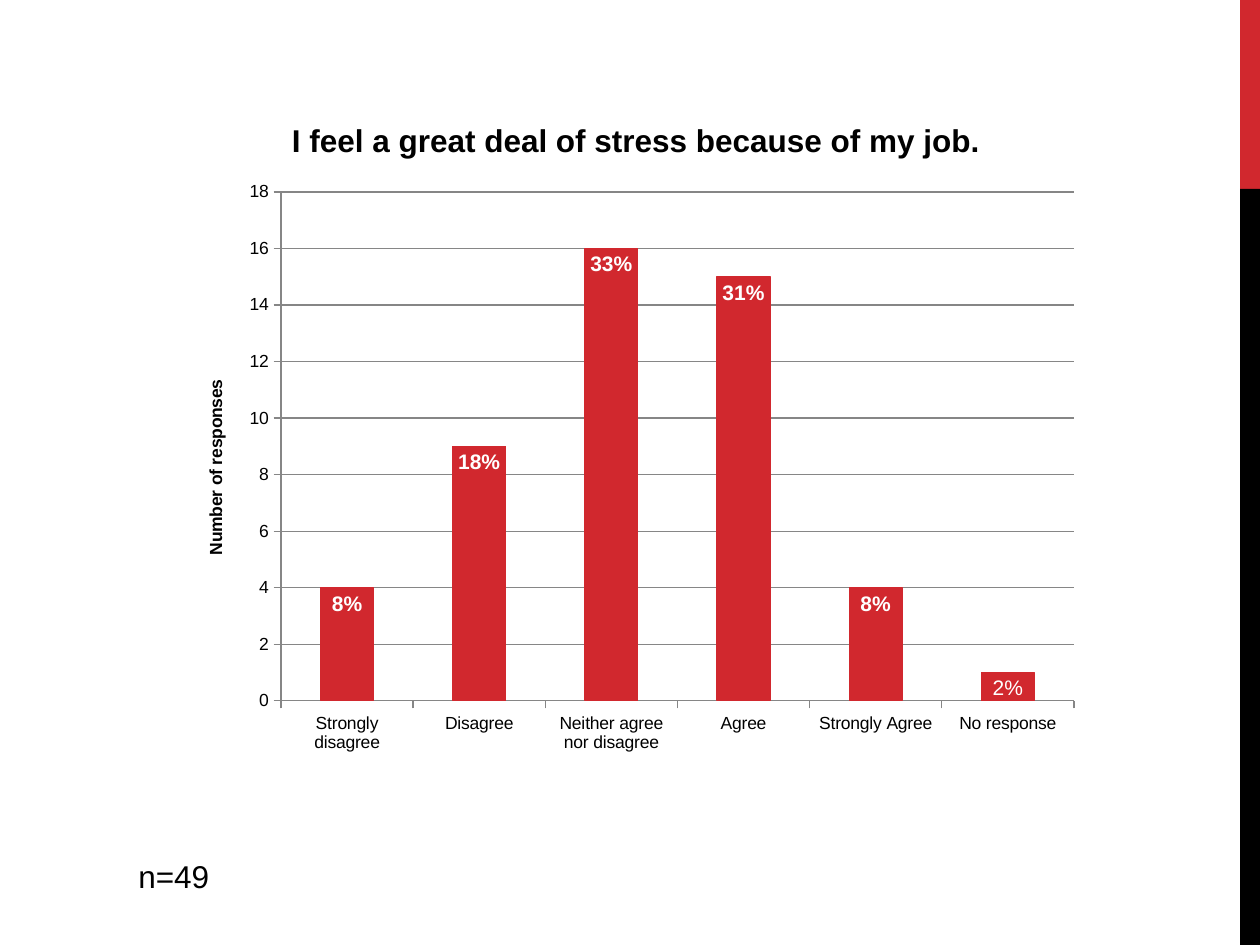
from dataclasses import dataclass

from pptx import Presentation
from pptx import util as u
from pptx.chart.data import CategoryChartData
from pptx.dml.color import RGBColor
from pptx.enum import chart as ch
from pptx.enum import shapes, text
from pptx.oxml import parse_xml
from pptx.oxml.ns import nsdecls, qn

SCALE = 914400 / 126
SIZE = (1260, 945)
CHART_BOX = (179, 94, 914, 672)
PLOT_BOX = (281, 192, 793, 509)
RESPONSES = [
    ("Strongly disagree", 4, "8%"),
    ("Disagree", 9, "18%"),
    ("Neither agree nor disagree", 16, "33%"),
    ("Agree", 15, "31%"),
    ("Strongly Agree", 4, "8%"),
    ("No response", 1, "2%"),
]


@dataclass(frozen=True)
class Theme:
    font: str = "Arial"
    accent: str = "D1282E"
    ink: str = "000000"
    paper: str = "FFFFFF"
    grid: str = "868686"
    title: int = 18
    body: int = 18
    label: int = 12
    axis: int = 10


def px(*values):
    return [u.Emu(round(v * SCALE)) for v in values]


def style_font(font, name, size, color, bold=False):
    font.name, font.size, font.bold = name, u.Pt(size), bold
    font.color.rgb = RGBColor.from_string(color)


def write(tf, content, **fmt):
    p = tf.paragraphs[0]
    r = p.add_run()
    r.text = content
    style_font(r.font, **fmt)


class Deck:
    def __init__(self, theme):
        self.t = theme
        self.prs = Presentation()
        self.prs.slide_width, self.prs.slide_height = px(*SIZE)
        self.s = self.prs.slides.add_slide(self.prs.slide_layouts[6])

    def fmt(self, size, color=None, bold=False):
        return dict(name=self.t.font, size=size, color=color or self.t.ink, bold=bold)

    def bar(self, box, color):
        sp = self.s.shapes.add_shape(shapes.MSO_SHAPE.RECTANGLE, *px(*box))
        sp.shadow.inherit = False
        sp.fill.solid()
        sp.fill.fore_color.rgb = RGBColor.from_string(color)
        sp.line.fill.background()

    def label(self, box, content):
        tf = self.s.shapes.add_textbox(*px(*box)).text_frame
        tf.word_wrap = True
        tf.auto_size = text.MSO_AUTO_SIZE.SHAPE_TO_FIT_TEXT
        write(tf, content, **self.fmt(self.t.body))

    def column_chart(self, box, plot_box, title, axis_title, rows):
        data = CategoryChartData()
        data.categories = [name for name, _, _ in rows]
        data.add_series("Series 1", [value for _, value, _ in rows])
        chart = self.s.shapes.add_chart(
            ch.XL_CHART_TYPE.COLUMN_CLUSTERED, *px(*box), data
        ).chart
        style_font(chart.font, **self.fmt(self.t.axis))
        chart.has_legend = False
        chart.has_title = True
        write(chart.chart_title.text_frame, title, **self.fmt(self.t.title, bold=True))
        chart.chart_title.include_in_layout = False
        self.style_axes(chart, axis_title)
        self.style_columns(chart.plots[0], [share for _, _, share in rows])
        self.place_plot(chart, box, plot_box)

    def style_axes(self, chart, axis_title):
        axis = chart.value_axis
        axis.minimum_scale, axis.maximum_scale, axis.major_unit = 0, 18, 2
        axis.has_title = True
        write(axis.axis_title.text_frame, axis_title, **self.fmt(self.t.axis, bold=True))
        lines = [a.format.line for a in (chart.category_axis, axis, axis.major_gridlines)]
        for line in lines:
            line.color.rgb = RGBColor.from_string(self.t.grid)
            line.width = u.Pt(0.75)
        for a in (chart.category_axis, axis):
            a.major_tick_mark = ch.XL_TICK_MARK.OUTSIDE

    def style_columns(self, plot, shares):
        plot.gap_width = 150
        plot.vary_by_categories = False
        series = plot.series[0]
        accent = RGBColor.from_string(self.t.accent)
        series.format.fill.solid()
        series.format.fill.fore_color.rgb = accent
        series.format.line.color.rgb = accent
        series.format.line.width = u.Pt(0.75)
        labels = series.data_labels
        labels.show_value = True
        labels.position = ch.XL_LABEL_POSITION.INSIDE_END
        style_font(labels.font, **self.fmt(self.t.label, self.t.paper, True))
        for i, share in enumerate(shares):
            bold = i < len(shares) - 1
            dl = series.points[i].data_label
            write(dl.text_frame, share, **self.fmt(self.t.label, self.t.paper, bold))
            dl.position = ch.XL_LABEL_POSITION.INSIDE_END

    def place_plot(self, chart, box, plot_box):
        left, top, width, height = box
        x, y, w, h = plot_box
        parts = dict(x=(x - left) / width, y=(y - top) / height, w=w / width, h=h / height)
        modes = '<c:xMode val="edge"/><c:yMode val="edge"/>'
        values = "".join(f'<c:{k} val="{v:.4f}"/>' for k, v in parts.items())
        area = chart.plots[0]._element.getparent()
        for old in area.findall(qn("c:layout")):
            area.remove(old)
        area.insert(0, parse_xml(
            f'<c:layout {nsdecls("c")}><c:manualLayout><c:layoutTarget val="inner"/>'
            f"{modes}{values}</c:manualLayout></c:layout>"
        ))


def main():
    theme = Theme()
    deck = Deck(theme)
    deck.bar((1240, 0, 20, 189), theme.accent)
    deck.bar((1240, 189, 20, 756), theme.ink)
    deck.column_chart(
        CHART_BOX, PLOT_BOX,
        "I feel a great deal of stress because of my job.",
        "Number of responses", RESPONSES,
    )
    deck.label((126, 851, 136, 50), "n=49")
    deck.prs.save("out.pptx")


if __name__ == "__main__":
    main()
